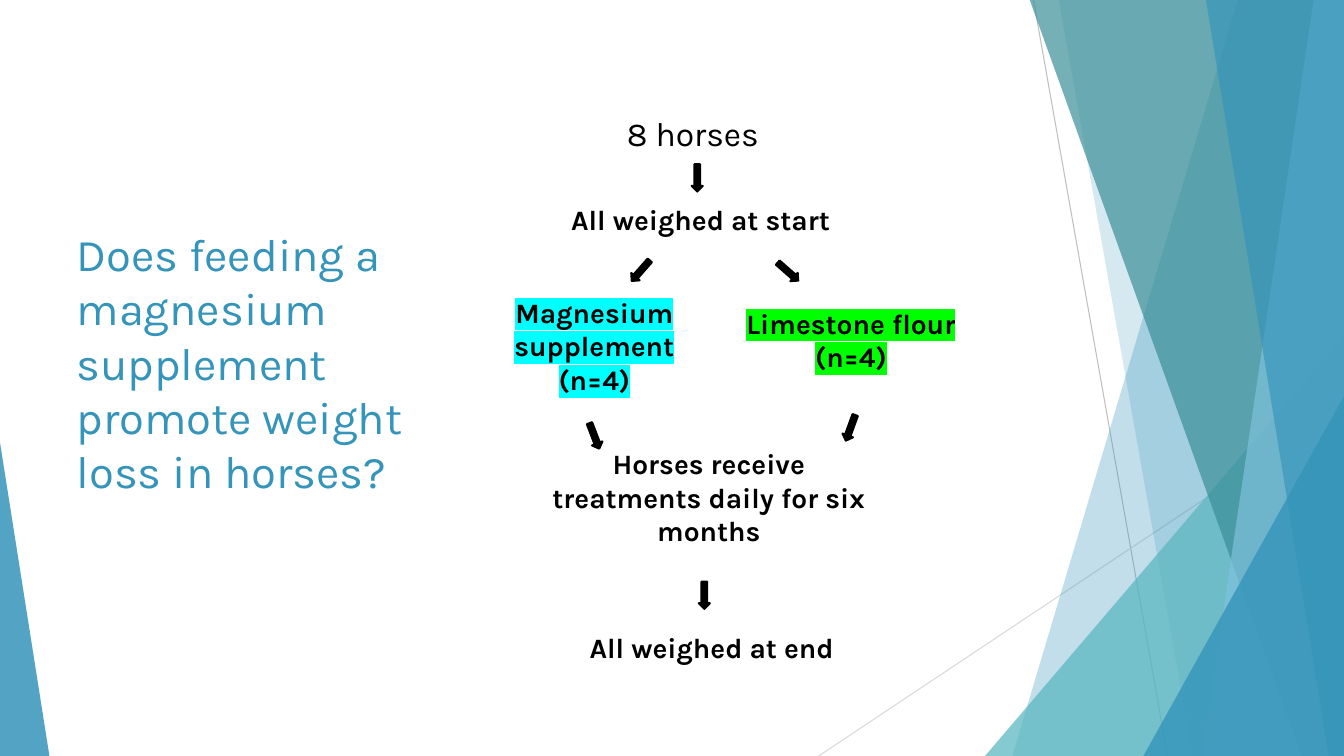
import pptx
import pptx.util
import pptx.dml.color
import pptx.enum.shapes
import pptx.enum.text
import pptx.oxml
import pptx.oxml.ns
import lxml.etree

Inches, Pt = pptx.util.Inches, pptx.util.Pt
RGBColor = pptx.dml.color.RGBColor
SHAPE = pptx.enum.shapes.MSO_SHAPE
ALIGN = pptx.enum.text.PP_ALIGN
qn = pptx.oxml.ns.qn

BLACK = RGBColor(0x00, 0x00, 0x00)
BLUE = RGBColor(0x34, 0x94, 0xBA)
SKY = RGBColor(0x7F, 0xC1, 0xDB)
TEAL = RGBColor(0x58, 0xB6, 0xC0)
DARK_TEAL = RGBColor(0x3A, 0x8F, 0x98)
GREY = RGBColor(0xBF, 0xBF, 0xBF)
LIGHT_GREY = RGBColor(0xD9, 0xD9, 0xD9)
CYAN = RGBColor(0x00, 0xFF, 0xFF)
GREEN = RGBColor(0x00, 0xFF, 0x00)
WIDTH, HEIGHT = 13.33, 7.5


def write(sp, text, size=20, color=BLACK, bold=True, align=ALIGN.CENTER, highlight=None):
    """Fill a shape with text, one paragraph per line."""
    tf = sp.text_frame
    tf.word_wrap = True
    tf.auto_size = pptx.enum.text.MSO_AUTO_SIZE.NONE
    tf.vertical_anchor = pptx.enum.text.MSO_ANCHOR.TOP
    for i, line in enumerate(text.split("\n")):
        p = tf.add_paragraph() if i else tf.paragraphs[0]
        p.alignment = align
        r = p.add_run()
        r.text = line
        r.font.name, r.font.size, r.font.bold = "Karla", Pt(size), bold
        r.font.color.rgb = color
        if highlight is not None:
            mark = lxml.etree.Element(qn("a:highlight"))
            lxml.etree.SubElement(mark, qn("a:srgbClr"), val=str(highlight))
            r.font._element.find(qn("a:solidFill")).addnext(mark)


def paint(sp, color, opacity=100):
    """Give a shape a plain fill without line or shadow."""
    sp.shadow.inherit = False
    sp.fill.solid()
    sp.fill.fore_color.rgb = color
    sp.line.fill.background()
    if opacity < 100:
        clr = sp._element.spPr.find(qn("a:solidFill"))[0]
        lxml.etree.SubElement(clr, qn("a:alpha"), val=str(opacity * 1000))


prs = pptx.Presentation()
prs.slide_width, prs.slide_height = Inches(WIDTH), Inches(HEIGHT)
s = prs.slides.add_slide(prs.slide_layouts[5])

# Thin background lines
for x1, y1, x2, y2, color in [(10.25, 0, 11.58, HEIGHT, GREY),
                              (WIDTH, 4.03, 8.12, HEIGHT, LIGHT_GREY)]:
    line = s.shapes.add_connector(pptx.enum.shapes.MSO_CONNECTOR.STRAIGHT,
                                  Inches(x1), Inches(y1), Inches(x2), Inches(y2))
    line.line.color.rgb = color
    line.line.width = Pt(0.75)
    lxml.etree.SubElement(line._element.spPr, qn("a:effectLst"))

# Background facets: slanted panels reach the right edge, triangles stand on the bottom edge
facets = [
    ("panel", 12.28, 10.04, BLUE, 30),
    ("panel", 10.5, 11.83, BLUE, 20),
    ("triangle", 9.77, 3.33, 3.56, 1, TEAL, 72),
    ("panel", 10.21, 12.91, DARK_TEAL, 70),
    ("panel", 13.03, 11.92, SKY, 70),
    ("panel", 11.96, 13.18, BLUE, 65),
    ("triangle", 11.34, 3.93, 1.99, 1, BLUE, 80),
    ("triangle", 0, 4.39, 0.49, 0, BLUE, 85),
]
for kind, *geometry, color, opacity in facets:
    if kind == "panel":
        top_x, bottom_x = geometry
        outline = s.shapes.build_freeform(Inches(top_x), Inches(-0.01))
        outline.add_line_segments([(Inches(x), Inches(y)) for x, y in
                                   [(WIDTH, -0.01), (WIDTH, HEIGHT), (bottom_x, HEIGHT)]])
        sp = outline.convert_to_shape()
    else:
        x, y, w, apex = geometry
        sp = s.shapes.add_shape(SHAPE.ISOSCELES_TRIANGLE, Inches(x), Inches(y),
                                Inches(w), Inches(HEIGHT - y))
        sp.adjustments[0] = apex
    paint(sp, color, opacity)

# Title
title = s.shapes.title
title.left, title.top, title.width, title.height = map(Inches, (0.66, 2.19, 4.14, 1.44))
write(title, "Does feeding a magnesium supplement promote weight loss in horses?",
      size=32.4, color=BLUE, bold=False, align=ALIGN.LEFT)

# Steps of the trial
steps = [
    (6.12, 1.07, 1.77, 0.5, "8 horses", dict(size=24, bold=False, align=ALIGN.LEFT)),
    (5.48, 1.96, 2.94, 0.44, "All weighed at start", {}),
    (4.8, 2.88, 2.19, 1.11, "Magnesium supplement (n=4)", dict(highlight=CYAN)),
    (6.73, 2.99, 3.42, 0.77, "Limestone flour\n(n=4)", dict(highlight=GREEN)),
    (5.32, 4.38, 3.42, 1.11, "Horses receive treatments daily for six months", {}),
    (5.59, 6.21, 2.94, 0.44, "All weighed at end", {}),
]
for x, y, w, h, text, style in steps:
    write(s.shapes.add_textbox(Inches(x), Inches(y), Inches(w), Inches(h)), text, **style)

# Arrows between the steps
for x, y, angle in [(6.78, 1.71, 90), (6.22, 2.63, 131.3), (7.68, 2.64, 41.3),
                    (5.76, 4.27, 69), (8.3, 4.19, 110.1), (6.85, 5.85, 90)]:
    arrow = s.shapes.add_shape(SHAPE.RIGHT_ARROW, Inches(x), Inches(y), Inches(0.27), Inches(0.11))
    arrow.rotation = angle
    paint(arrow, BLACK)
    arrow.line.color.rgb = BLACK
    arrow.line.width = Pt(1.5)

prs.save("out.pptx")
